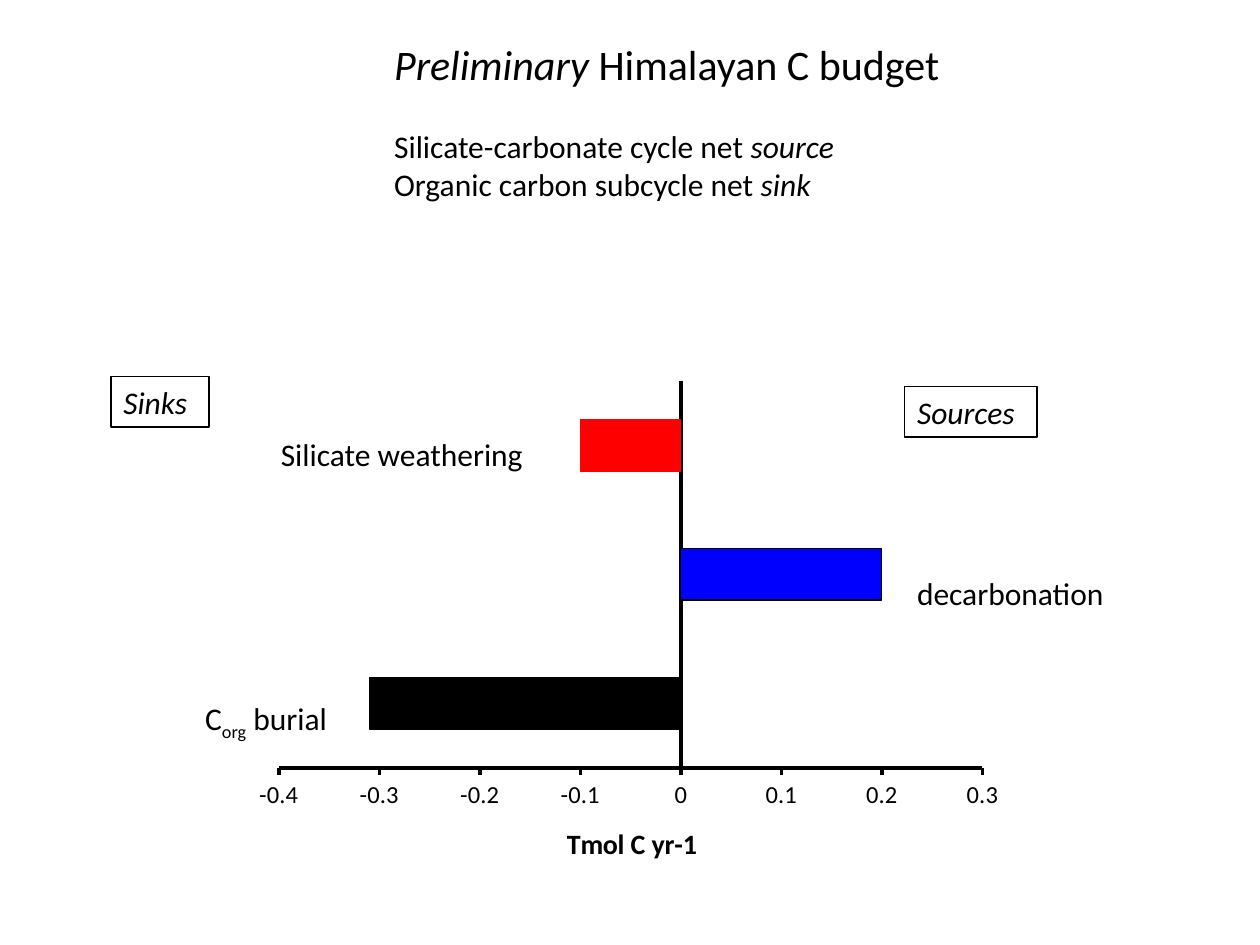
from lxml import etree
from pptx import Presentation
from pptx.chart.data import CategoryChartData
from pptx.dml.color import RGBColor
from pptx.enum.chart import XL_CHART_TYPE, XL_TICK_LABEL_POSITION, XL_TICK_MARK
from pptx.enum.text import MSO_AUTO_SIZE
from pptx.oxml.ns import qn
from pptx.util import Inches, Pt

FONT = "Calibri"
COLORS = {"black": "000000", "blue": "0000FF", "red": "FF0000"}

# (category, value, fill, outline)
BARS = [
    ("1", -0.31, "black", "black"),
    ("2", 0.2, "blue", "black"),
    ("3", -0.1, "red", "red"),
]
CHART_AREA = (1.97, 2.94, 6.07, 4.15)
AXIS_TITLE = "Tmol C yr-1"

# Each paragraph: (size, space before, [(text, style), ...])
HEADING = [
    (24, 0, [("Preliminary", "italic"), (" Himalayan C budget", "")]),
    (18, 21.5, [("Silicate-carbonate cycle net ", ""), ("source", "italic")]),
    (18, 0, [("Organic carbon subcycle net ", ""), ("sink", "italic")]),
]


def label(*spans):
    return [(18, 0, spans)]


# (left, top, width, height), paragraphs, framed
TEXTS = [
    ((7.18, 4.51, 1.7, 0.4), label(("decarbonation", "")), False),
    ((1.53, 5.5, 1.21, 0.4),
     label(("C", ""), ("org", "subscript"), (" burial", "")), False),
    ((2.13, 3.4, 2.15, 0.4), label(("Silicate weathering", "")), False),
    ((3.03, 0.26, 4.6, 1.41), HEADING, False),
    ((7.18, 3.07, 1.05, 0.4), label(("Sources", "italic")), True),
    ((0.88, 2.99, 0.78, 0.4), label(("Sinks", "italic")), True),
]


def color(name):
    return RGBColor.from_string(COLORS[name])


def set_line(line, name, width):
    line.color.rgb = color(name)
    line.width = Pt(width)


def set_font(font, size, **values):
    font.color.rgb = color("black")
    for key, value in {"name": FONT, "size": Pt(size), **values}.items():
        setattr(font, key, value)


def set_layout(parent, after, **values):
    """Place a chart part by fractions of the chart area."""
    for old in parent.findall(qn("c:layout")):
        parent.remove(old)
    layout = etree.Element(qn("c:layout"))
    manual = etree.SubElement(layout, qn("c:manualLayout"))
    for key, value in values.items():
        etree.SubElement(manual, qn("c:" + key)).set("val", str(value))
    if after is None:
        parent.insert(0, layout)
    else:
        parent.find(qn(after)).addnext(layout)


def add_bar_chart(page):
    data = CategoryChartData()
    data.categories = [bar[0] for bar in BARS]
    data.add_series("Series 1", [bar[1] for bar in BARS])
    chart = page.shapes.add_chart(
        XL_CHART_TYPE.BAR_CLUSTERED, *map(Inches, CHART_AREA), data).chart
    chart.has_legend = chart.has_title = False
    set_font(chart.font, 10)

    plot = chart.plots[0]
    plot.gap_width = 150
    plot.vary_by_categories = False
    series = plot.series[0]
    series.invert_if_negative = False
    for index, (_, _, fill, outline) in enumerate(BARS):
        bar_format = series.points[index].format
        bar_format.fill.solid()
        bar_format.fill.fore_color.rgb = color(fill)
        set_line(bar_format.line, outline, 0.75)

    categories, values = chart.category_axis, chart.value_axis
    for axis, tick in ((categories, XL_TICK_MARK.NONE),
                       (values, XL_TICK_MARK.OUTSIDE)):
        axis.has_major_gridlines = False
        axis.major_tick_mark = tick
        axis.minor_tick_mark = XL_TICK_MARK.NONE
        set_line(axis.format.line, "black", 2)
    categories.tick_label_position = XL_TICK_LABEL_POSITION.NONE
    values.minimum_scale, values.maximum_scale = -0.4, 0.3
    values.major_unit = 0.1
    values.tick_labels.number_format = "General"
    values.tick_labels.number_format_is_linked = False
    set_font(values.tick_labels.font, 14)

    title = values.axis_title
    span = title.text_frame.paragraphs[0].add_run()
    span.text = AXIS_TITLE
    set_font(span.font, 16, bold=True)
    set_layout(title._element, "c:tx",
               xMode="edge", yMode="edge", x=0.41, y=0.86)
    set_layout(plot._element.getparent(), None, layoutTarget="inner",
               xMode="edge", yMode="edge", x=0.04, y=0.02, w=0.92, h=0.74)


def add_text(page, area, paragraphs, framed):
    box = page.shapes.add_textbox(*map(Inches, area))
    if framed:
        set_line(box.line, "black", 0.75)
    frame = box.text_frame
    frame.word_wrap = False
    frame.auto_size = MSO_AUTO_SIZE.SHAPE_TO_FIT_TEXT
    for index, (size, space, spans) in enumerate(paragraphs):
        para = frame.add_paragraph() if index else frame.paragraphs[0]
        if space:
            para.space_before = Pt(space)
        for text, style in spans:
            span = para.add_run()
            span.text = text
            set_font(span.font, size, italic=style == "italic")
            if style == "subscript":
                span.font._element.set("baseline", "-25000")


def main():
    deck = Presentation()
    deck.slide_width, deck.slide_height = Inches(10), Inches(7.5)
    page = deck.slides.add_slide(deck.slide_layouts[6])
    add_bar_chart(page)
    for area, paragraphs, framed in TEXTS:
        add_text(page, area, paragraphs, framed)
    deck.save("out.pptx")


if __name__ == "__main__":
    main()
